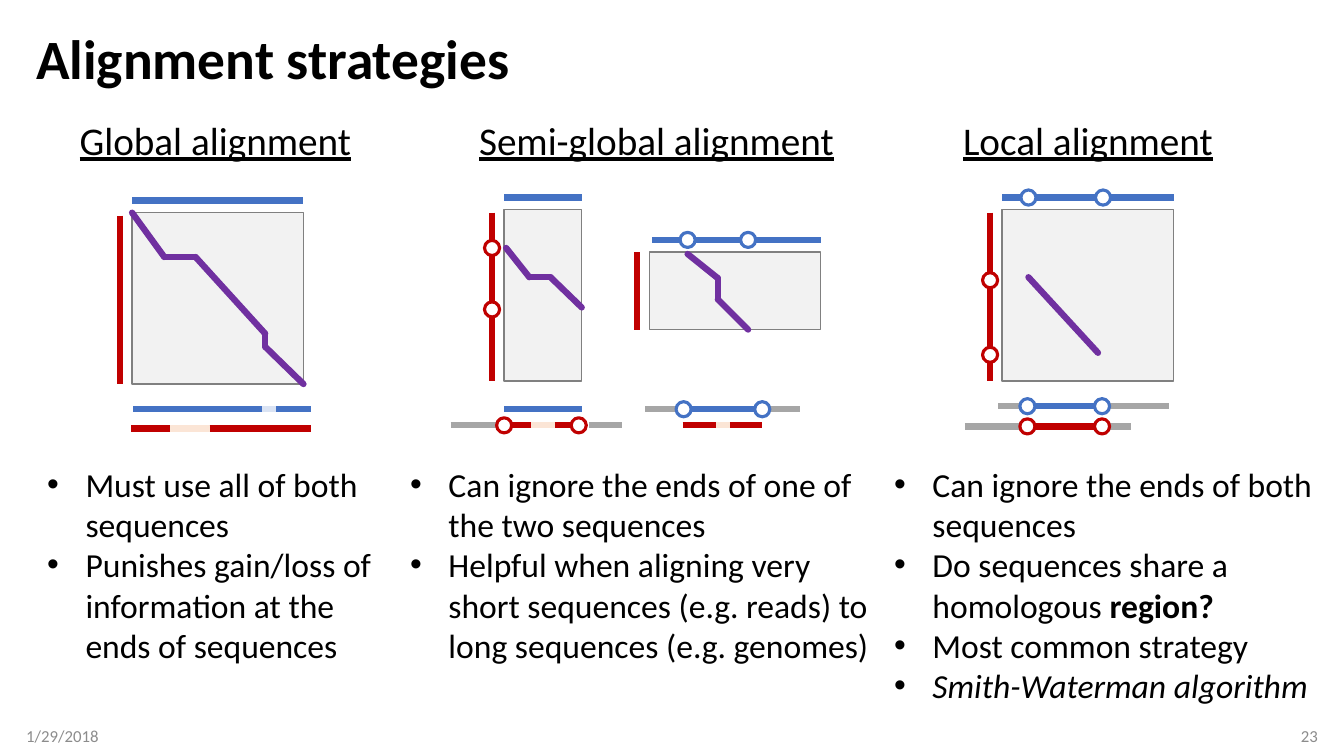
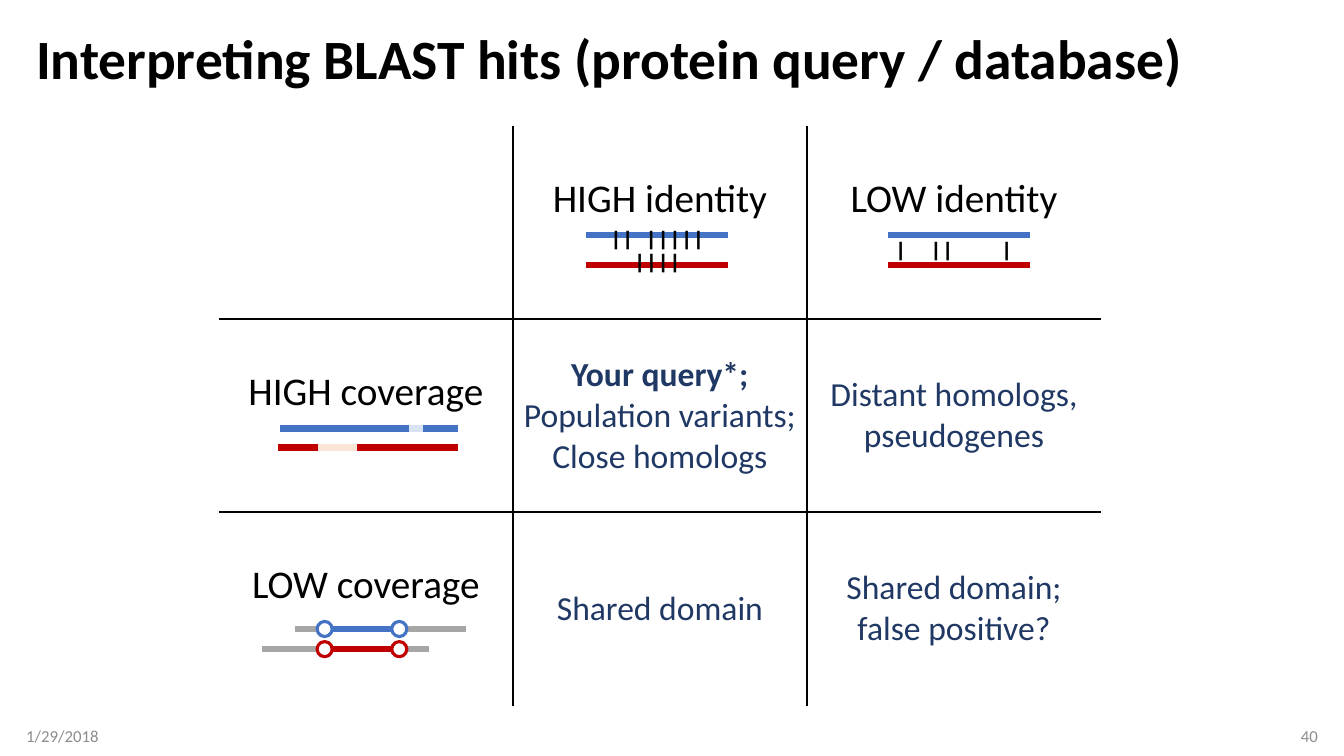
from itertools import pairwise

from lxml.etree import SubElement
from pptx import Presentation
from pptx.dml.color import RGBColor
from pptx.enum.shapes import MSO_CONNECTOR, MSO_SHAPE
from pptx.enum.text import MSO_ANCHOR, PP_ALIGN
from pptx.oxml.ns import qn
from pptx.util import Pt

PX = 9144  # 100 px to the inch
COLORS = {
    "text": "000000", "footer": "8C8C8C", "answer": "203864", "white": "FFFFFF",
    "query": "4472C4", "query_gap": "DAE3F3",
    "target": "C00000", "target_gap": "FBE5D6",
    "ignored": "A6A6A6", "route": "7030A0",
    "matrix": "F2F2F2", "matrix_edge": "808080",
}
FONT = "Calibri"
BAR_WIDTH = 4.5
RING = 15
MATRIX_GAP = 12
NO_TABLE_STYLE = "{2D5ABB26-0587-4C30-8999-92F81FD0307C}"

# Each strip: vertical offset, (colour, start, end) segments, ring colour, ring centres
ALIGNED_PAIRS = {
    "gapped": [
        (0, [("query", 2, 133), ("query_gap", 130, 146), ("query", 144, 178)], None, []),
        (19, [("target", 0, 39), ("target_gap", 39, 78), ("target", 78, 178)], None, []),
    ],
    "clipped target": [
        (0, [("query", 53, 130)], None, []),
        (16, [("ignored", 0, 46), ("target", 61, 80), ("target_gap", 80, 103),
              ("target", 103, 120), ("ignored", 137, 170)], "target", [53, 127]),
    ],
    "clipped query": [
        (0, [("ignored", 0, 30), ("query", 43, 108), ("ignored", 122, 153)],
         "query", [38, 116]),
        (16, [("target", 37, 70), ("target_gap", 70, 84), ("target", 84, 116)], None, []),
    ],
    "clipped both": [
        (0, [("ignored", 33, 61), ("query", 60, 135), ("ignored", 134, 202)],
         "query", [62, 136]),
        (20, [("ignored", 0, 61), ("target", 60, 135), ("ignored", 134, 165)],
         "target", [62, 136]),
    ],
}


def rgb(name):
    return RGBColor.from_string(COLORS[name])


def emu(*lengths):
    return [length * PX for length in lengths]


def style_runs(paragraph, size, color="text", font=FONT, **emphasis):
    for run in paragraph.runs:
        run.font.name = font
        run.font.size = Pt(size)
        run.font.color.rgb = rgb(color)
        for attribute, value in emphasis.items():
            setattr(run.font, attribute, value)


def write(frame, lines, size, align=PP_ALIGN.LEFT, **style):
    frame.text = "\n".join(lines)
    for paragraph in frame.paragraphs:
        paragraph.alignment = align
        style_runs(paragraph, size, **style)


def add_text(slide, box, lines, size, anchor=MSO_ANCHOR.TOP, **style):
    frame = slide.shapes.add_textbox(*emu(*box)).text_frame
    frame.word_wrap = True
    frame.vertical_anchor = anchor
    write(frame, lines, size, **style)
    return frame


def add_bar(slide, start, end, color, round_cap=False):
    bar = slide.shapes.add_connector(MSO_CONNECTOR.STRAIGHT, *emu(*start, *end))
    bar.line.color.rgb = rgb(color)
    bar.line.width = Pt(BAR_WIDTH)
    properties = bar._element.spPr
    if round_cap:
        properties.find(qn("a:ln")).set("cap", "rnd")
    SubElement(properties, qn("a:effectLst"))


def add_outlined(slide, kind, box, fill, edge, width):
    shape = slide.shapes.add_shape(kind, *emu(*box))
    shape.shadow.inherit = False
    shape.fill.solid()
    shape.fill.fore_color.rgb = rgb(fill)
    shape.line.color.rgb = rgb(edge)
    shape.line.width = Pt(width)


def add_ring(slide, x, y, color):
    """Mark a sequence position, centred on x, y."""
    box = (x - RING / 2, y - RING / 2, RING, RING)
    add_outlined(slide, MSO_SHAPE.OVAL, [round(v * PX) / PX for v in box],
                 "white", color, 2.25)


def add_aligned_pair(slide, x, y, kind):
    for drop, segments, ring_color, rings in ALIGNED_PAIRS[kind]:
        for color, start, end in segments:
            add_bar(slide, (x + start, y + drop), (x + end, y + drop), color)
        for center in rings:
            add_ring(slide, x + center, y + drop, ring_color)


def add_matrix(slide, box, route, query_rings=(), target_rings=(),
               query_inset=0, target_inset=3):
    """Draw a dot matrix with its two sequences and the route through it."""
    x, y, width, height = box
    query_y, target_x = y - MATRIX_GAP, x - MATRIX_GAP
    add_outlined(slide, MSO_SHAPE.RECTANGLE, box, "matrix", "matrix_edge", 1)
    add_bar(slide, (x + query_inset, query_y), (x + width, query_y), "query")
    add_bar(slide, (target_x, y + target_inset), (target_x, y + height), "target")
    for (x1, y1), (x2, y2) in pairwise(route):
        add_bar(slide, (x + x1, y + y1), (x + x2, y + y2), "route", round_cap=True)
    for offset in query_rings:
        add_ring(slide, x + offset, query_y, "query")
    for offset in target_rings:
        add_ring(slide, target_x, y + offset, "target")


def add_heading(slide, x, width, heading):
    add_text(slide, (x, 110, width, 57), [heading], 28,
             align=PP_ALIGN.CENTER, underline=True)


def add_bullets(slide, box, lines):
    frame = add_text(slide, box, lines, 24)
    for paragraph in frame.paragraphs:
        properties = paragraph._p.get_or_add_pPr()
        properties.set("marL", str(38 * PX))
        properties.set("indent", str(-38 * PX))
        SubElement(properties, qn("a:buFont"), typeface="Arial")
        SubElement(properties, qn("a:buChar"), char="•")
    return frame.paragraphs


def add_base_slide(deck, title, number):
    slide = deck.slides.add_slide(deck.slide_layouts[6])
    heading = add_text(slide, (26, 25, 1281, 72), [title], 39.6,
                       MSO_ANCHOR.MIDDLE, bold=True)
    heading.paragraphs[0].line_spacing = 0.9
    footer = {"size": 12, "anchor": MSO_ANCHOR.MIDDLE, "color": "footer"}
    date = add_text(slide, (26, 710, 300, 40), ["1/29/2018"], **footer)
    date.margin_left = 0
    page = add_text(slide, (1007, 710, 300, 40), [number], align=PP_ALIGN.RIGHT, **footer)
    page.margin_right = 0
    return slide


def add_global_column(slide, x):
    add_heading(slide, x, 353, "Global alignment")
    add_matrix(slide, (x + 94, 211, 170, 170),
               [(0, 0), (32, 44), (63, 44), (132, 120), (132, 133), (170, 170)])
    add_aligned_pair(slide, x + 93, 406, "gapped")
    add_bullets(slide, (x, 455, 353, 212), [
        "Must use all of both sequences",
        "Punishes gain/loss of information at the ends of sequences",
    ])


def add_semi_global_column(slide, x):
    add_heading(slide, x + 62, 384, "Semi-global alignment")
    add_matrix(slide, (x + 103, 208, 77, 170),
               [(2, 38), (25, 67), (46, 67), (77, 97)], target_rings=(38, 99))
    add_aligned_pair(slide, x + 50, 406, "clipped target")
    add_matrix(slide, (x + 247, 250, 170, 77),
               [(38, 2), (68, 26), (68, 47), (98, 77)], query_rings=(38, 98),
               query_inset=3, target_inset=0)
    add_aligned_pair(slide, x + 243, 406, "clipped query")
    add_bullets(slide, (x, 455, 480, 212), [
        "Can ignore the ends of one of the two sequences",
        "Helpful when aligning very short sequences (e.g. reads) to long sequences "
        "(e.g. genomes)",
    ])


def add_local_column(slide, x):
    add_heading(slide, x + 10, 384, "Local alignment")
    add_matrix(slide, (x + 117, 208, 170, 170), [(26, 67), (95, 142)],
               query_rings=(26, 100), target_rings=(70, 144))
    add_aligned_pair(slide, x + 80, 403, "clipped both")
    _, region, _, algorithm = add_bullets(slide, (x, 455, 440, 252), [
        "Can ignore the ends of both sequences",
        "Do sequences share a homologous ",
        "Most common strategy",
        "Smith-Waterman algorithm",
    ])
    region.add_run().text = "region?"
    style_runs(region, 24)
    region.runs[-1].font.bold = True
    algorithm.runs[0].font.italic = True


def set_inner_borders(cell, row, column):
    """Rule only the sides that face another cell of the 3 by 3 grid."""
    sides = {"a:lnL": column > 0, "a:lnR": column < 2, "a:lnT": row > 0, "a:lnB": row < 2}
    properties = cell._tc.get_or_add_tcPr()
    for side, ruled in sides.items():
        border = SubElement(properties, qn(side), w=str(Pt(1.5)))
        if ruled:
            fill = SubElement(border, qn("a:solidFill"))
            SubElement(fill, qn("a:srgbClr"), val=COLORS["text"])
        else:
            SubElement(border, qn("a:noFill"))
    SubElement(properties, qn("a:noFill"))


def add_hit_table(slide, box):
    hits = [
        [[], ["HIGH identity"], ["LOW identity"]],
        [["HIGH coverage"], ["Your query*;", "Population variants;", "Close homologs"],
         ["Distant homologs,", "pseudogenes"]],
        [["LOW coverage"], ["Shared domain"], ["Shared domain;", "false positive?"]],
    ]
    table = slide.shapes.add_table(3, 3, *emu(*box)).table
    table.first_row = table.horz_banding = False
    table._tbl.tblPr.find(qn("a:tableStyleId")).text = NO_TABLE_STYLE
    for r, row in enumerate(hits):
        for c, lines in enumerate(row):
            cell = table.cell(r, c)
            cell.vertical_anchor = MSO_ANCHOR.MIDDLE
            set_inner_borders(cell, r, c)
            if r and c:
                write(cell.text_frame, lines, 24, PP_ALIGN.CENTER, color="answer")
            elif lines:
                cell.margin_bottom = 52 * PX
                write(cell.text_frame, lines, 28, PP_ALIGN.CENTER)
    table.cell(1, 1).text_frame.paragraphs[0].runs[0].font.bold = True


def add_identity_sketch(slide, x, y, matches):
    for drop, color in ((0, "query"), (30, "target")):
        add_bar(slide, (x, y + drop), (x + 141, y + drop), color)
    add_text(slide, (x - 14, y - 3, 170, 34), [matches], 14, MSO_ANCHOR.MIDDLE,
             align=PP_ALIGN.CENTER, font="Courier New", bold=True)


def add_strategies_slide(deck):
    slide = add_base_slide(deck, "Alignment strategies", "23")
    add_global_column(slide, 37)
    add_semi_global_column(slide, 397)
    add_local_column(slide, 877)


def add_hits_slide(deck):
    slide = add_base_slide(deck, "Interpreting BLAST hits (protein query / database)", "40")
    add_hit_table(slide, (217, 125, 875, 575))
    add_identity_sketch(slide, 581, 233, "|| ||||| ||||")
    add_identity_sketch(slide, 881, 233, "|  ||    | ")
    add_aligned_pair(slide, 276, 425, "gapped")
    add_aligned_pair(slide, 260, 624, "clipped both")


def main():
    deck = Presentation()
    deck.slide_width, deck.slide_height = emu(1333, 750)
    add_strategies_slide(deck)
    add_hits_slide(deck)
    deck.save("out.pptx")


if __name__ == "__main__":
    main()
